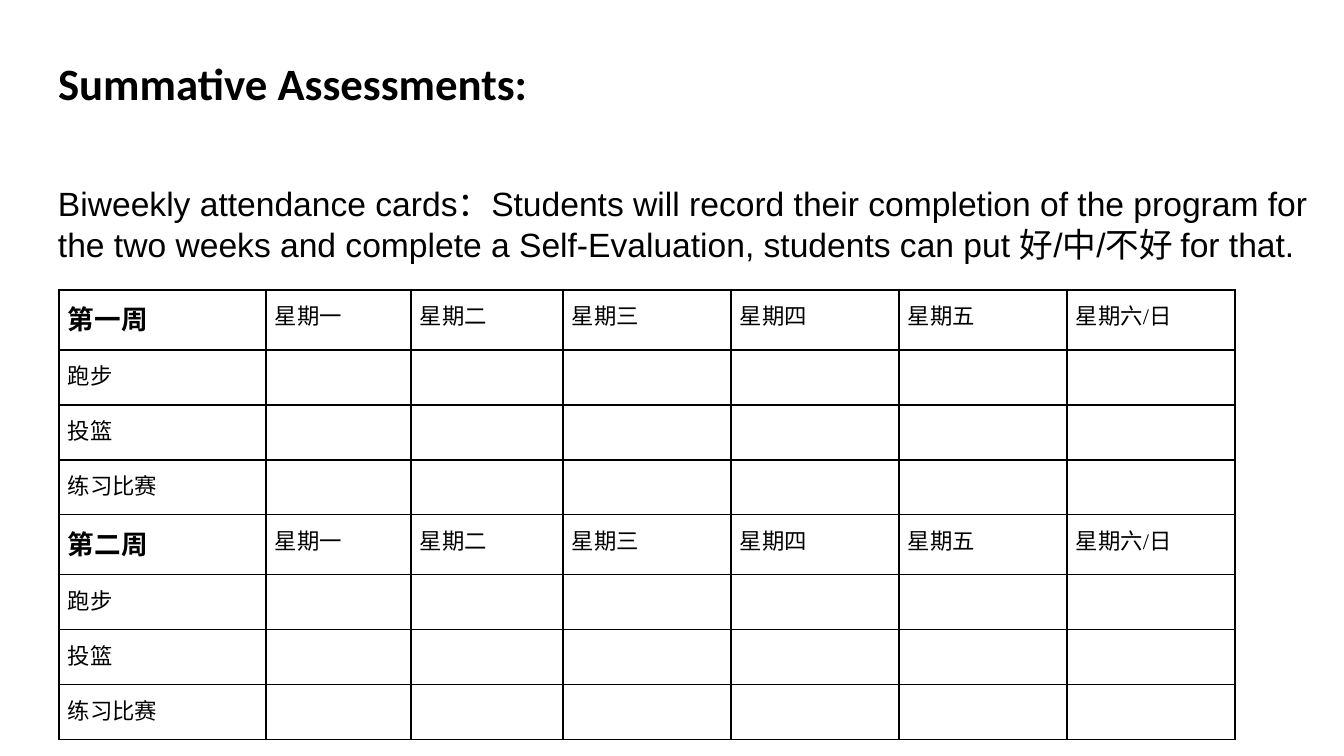
import pptx
import pptx.dml.color
import pptx.enum.text
import pptx.oxml
import pptx.oxml.ns
import pptx.util

PX = 914400 / 100.8
BLACK, WHITE = "000000", "FFFFFF"
TITLE = {"name": "Calibri", "size": 32, "bold": True}
BODY = {"name": "Arial", "size": 24, "bold": False}
WEEK = {"name": "Times New Roman", "size": 19, "bold": True}
ENTRY = {"name": "Times New Roman", "size": 16, "bold": False}
ANCHOR = pptx.enum.text.MSO_ANCHOR


def px(n):
    return pptx.util.Emu(round(n * PX))


def colour(value):
    return pptx.dml.color.RGBColor.from_string(value)


class Deck:
    def __init__(self, width, height):
        self.prs = pptx.Presentation()
        self.prs.slide_width, self.prs.slide_height = px(width), px(height)
        self.s = self.prs.slides.add_slide(self.prs.slide_layouts[5])
        self.s.background.fill.solid()
        self.s.background.fill.fore_color.rgb = colour(WHITE)

    def add_run(self, p, text, style):
        p.alignment = pptx.enum.text.PP_ALIGN.LEFT
        r = p.add_run()
        r.text = text
        for key, value in style.items():
            setattr(r.font, key, pptx.util.Pt(value) if key == "size" else value)
        r.font.color.rgb = colour(BLACK)

    def frame(self, sp, text, style, anchor):
        tf = sp.text_frame
        settings = {"word_wrap": True, "vertical_anchor": anchor,
                    "auto_size": pptx.enum.text.MSO_AUTO_SIZE.NONE}
        for side in ("left", "top", "right", "bottom"):
            settings["margin_" + side] = px(13)
        for key, value in settings.items():
            setattr(tf, key, value)
        p = tf.paragraphs[0]
        p.space_after = pptx.util.Pt(21)
        self.add_run(p, text, style)

    def title(self, box, text):
        sp = self.s.shapes.title
        for key, value in zip(("left", "top", "width", "height"), box):
            setattr(sp, key, px(value))
        self.frame(sp, text, TITLE, ANCHOR.TOP)

    def text(self, box, text):
        sp = self.s.shapes.add_textbox(*map(px, box))
        self.frame(sp, text, BODY, ANCHOR.MIDDLE)

    def border(self, cell):
        tc_pr = cell._tc.get_or_add_tcPr()
        for side in "LRTB":
            tc_pr.append(pptx.oxml.parse_xml(
                f'<a:ln{side} {pptx.oxml.ns.nsdecls("a")} w="12700"><a:solidFill>'
                f'<a:srgbClr val="{BLACK}"/></a:solidFill></a:ln{side}>'))

    def table(self, left, top, widths, rows):
        """Each row is (height, style of first cell, texts)."""
        heights = [row[0] for row in rows]
        table = self.s.shapes.add_table(
            len(rows), len(widths), px(left), px(top),
            px(sum(widths)), px(sum(heights))).table
        table.first_row = table.horz_banding = False
        for column, width in zip(table.columns, widths):
            column.width = px(width)
        for line, (height, first_style, texts) in zip(table.rows, rows):
            line.height = px(height)
            for i, cell in enumerate(line.cells):
                for side in ("left", "top", "right", "bottom"):
                    setattr(cell, "margin_" + side, px(9))
                self.border(cell)
                cell.fill.background()
                if i < len(texts):
                    self.add_run(cell.text_frame.paragraphs[0], texts[i],
                                 ENTRY if i else first_style)


def main():
    deck = Deck(1344, 756)

    # Heading
    deck.title((45, 43, 1252, 84), "Summative Assessments:")

    # Attendance table: one header and three activities per week
    days = ["星期" + day for day in ("一", "二", "三", "四", "五", "六/日")]
    rows = []
    for week in ("第一周", "第二周"):
        rows.append((60, WEEK, [week] + days))
        rows += [(55, ENTRY, [name]) for name in ("跑步", "投篮", "练习比赛")]
    deck.table(59, 290, [207, 145, 152] + [168] * 4, rows)

    # Instructions
    deck.text((45, 145, 1287, 157),
              "Biweekly attendance cards：Students will record their completion "
              "of the program for the two weeks and complete a Self-Evaluation, "
              "students can put 好/中/不好 for that.")

    deck.prs.save("out.pptx")


if __name__ == "__main__":
    main()
